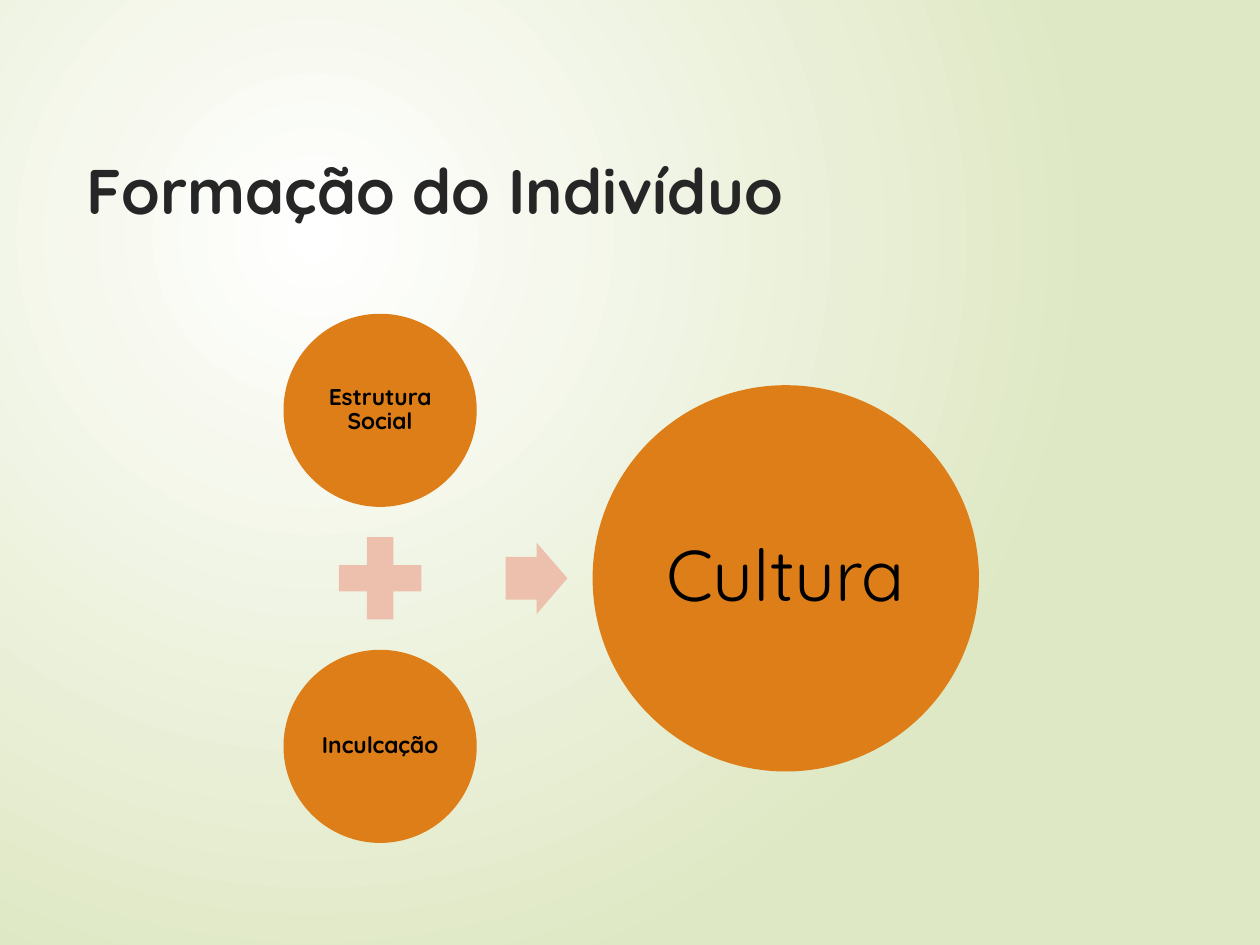
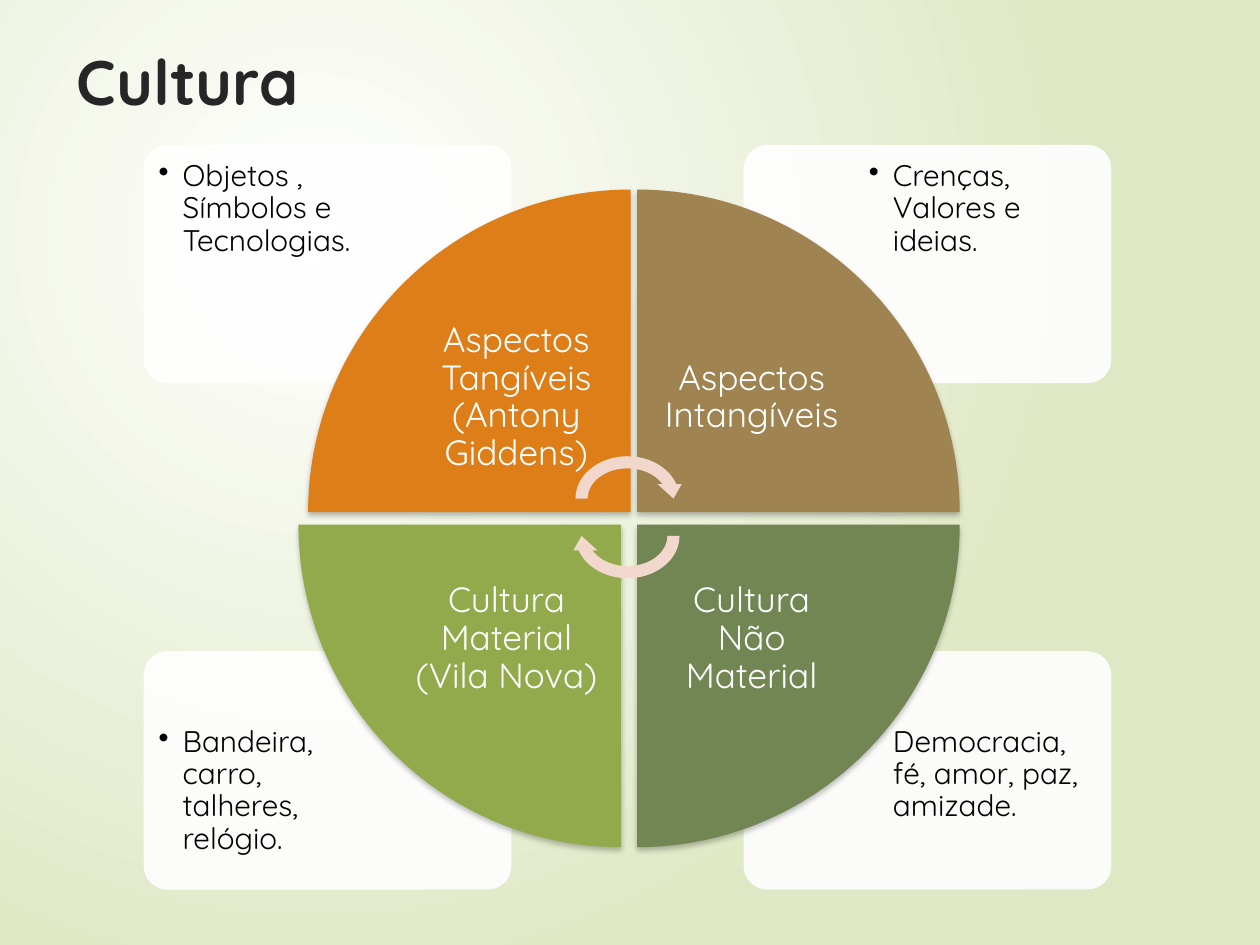
from dataclasses import dataclass

from lxml import etree
from pptx import Presentation
from pptx.dml.color import RGBColor
from pptx.enum.shapes import MSO_SHAPE as Preset
from pptx.enum.text import MSO_ANCHOR as Anchor, MSO_AUTO_SIZE as AutoSize, PP_ALIGN as Align
from pptx.oxml import parse_xml
from pptx.oxml.ns import nsdecls, qn
from pptx.util import Inches, Pt

FONT = "Quicksand"
ORANGE, BROWN, DARK_GREEN, GREEN = "DE7E18", "9F8351", "728653", "92AA4C"
PINK, PALE_PINK = "ECC0AC", "F2D8CC"
WHITE, BLACK, TITLE_GRAY, BACKGROUND_GREEN = "FFFFFF", "000000", "262626", "DFE8C4"
WEDGE_TEXT_SHARE = 0.71


@dataclass
class Box:
    """A rectangle in inches."""
    left: float
    top: float
    width: float
    height: float

    def share(self, x, y, width, height):
        """Return an inner box given as shares of this one."""
        return Box(self.left + x * self.width, self.top + y * self.height,
                   width * self.width, height * self.height)

    def emu(self):
        return [Inches(length) for length in (self.left, self.top, self.width, self.height)]


SLIDE = Box(0, 0, 10, 7.5)


@dataclass
class Aspect:
    """One quarter of the culture wheel with its card of examples."""
    column: int
    row: int
    wedge_left: float
    rotation: int
    color: str
    label: str
    examples: str


ASPECTS = [
    Aspect(0, 0, 0.17, 0, ORANGE, "Aspectos Tangíveis (Antony Giddens)",
           "Objetos , Símbolos e Tecnologias."),
    Aspect(1, 0, 0.51, 90, BROWN, "Aspectos Intangíveis", "Crenças, Valores e ideias."),
    Aspect(1, 1, 0.51, 180, DARK_GREEN, "Cultura Não Material",
           "Democracia, fé, amor, paz, amizade."),
    Aspect(0, 1, 0.16, 270, GREEN, "Cultura Material (Vila Nova)",
           "Bandeira, carro, talheres, relógio."),
]


def rgb(color):
    return RGBColor.from_string(color)


def write_text(shape, text, size, color=BLACK, bold=False, inset=0.0,
               anchor=Anchor.MIDDLE, align=Align.CENTER):
    frame = shape.text_frame
    frame.word_wrap = True
    frame.auto_size = AutoSize.NONE
    frame.vertical_anchor = anchor
    frame.margin_left = frame.margin_right = Inches(inset)
    frame.margin_top = frame.margin_bottom = Inches(inset)
    paragraph = frame.paragraphs[0]
    paragraph.text = text
    paragraph.alignment = align
    paragraph.line_spacing = 0.9
    font = paragraph.font
    font.name, font.size, font.bold = FONT, Pt(size), bold
    font.color.rgb = rgb(color)
    return paragraph


def add_preset(slide, preset, box, color, rotation=0):
    shape = slide.shapes.add_shape(preset, *box.emu())
    shape.shadow.inherit = False
    shape.fill.solid()
    shape.fill.fore_color.rgb = rgb(color)
    shape.line.fill.background()
    shape.rotation = rotation
    return shape


def add_circle(slide, box, text, size, bold, inset):
    circle = add_preset(slide, Preset.OVAL, box, ORANGE)
    write_text(circle, text, size, bold=bold, inset=inset)


def set_background(master):
    fill = master.background.fill
    fill.gradient()
    for stop, position, color in zip(fill.gradient_stops, (0, 1), (WHITE, BACKGROUND_GREEN)):
        stop.position = position
        stop.color.rgb = rgb(color)
    linear = next(master.element.iter(qn("a:lin")))
    linear.getparent().replace(linear, parse_xml(
        f'<a:path {nsdecls("a")} path="circle">'
        '<a:fillToRect l="50000" t="50000" r="100000" b="100000"/></a:path>'))


def add_titled_slide(presentation, text, box):
    slide = presentation.slides.add_slide(presentation.slide_layouts.get_by_name("Title Only"))
    title = slide.shapes.title
    title.left, title.top, title.width, title.height = box.emu()
    paragraph = write_text(title, text, 36, TITLE_GRAY, True, anchor=Anchor.TOP, align=Align.LEFT)
    paragraph.line_spacing = 1.0
    frame = title.text_frame
    frame.margin_left, frame.margin_top = Inches(0.1), Inches(0.05)
    return slide


def add_equation(slide, box):
    """Two stacked circles and a plus sign lead to a circle twice as large."""
    circle, plus, gap = 1.0, 0.58, 0.08
    arrow_left, arrow_width, arrow_height, result_left = 1.15, 0.32, 0.37, 1.6
    columns, rows = result_left + 2 * circle, 2 * (circle + gap) + plus

    def centered(left, middle, width, height):
        return box.share(left / columns, (middle - height / 2) / rows,
                         width / columns, height / rows)

    middle = rows / 2
    for text, center in (("Estrutura Social", circle / 2), ("Inculcação", rows - circle / 2)):
        add_circle(slide, centered(0, center, circle, circle), text, 13, True, 0.02)
    add_preset(slide, Preset.MATH_PLUS, centered((circle - plus) / 2, middle, plus, plus), PINK)
    arrow = add_preset(slide, Preset.RIGHT_ARROW,
                       centered(arrow_left, middle, arrow_width, arrow_height), PINK)
    arrow.adjustments[0] = 0.6
    add_circle(slide, centered(result_left, middle, 2 * circle, 2 * circle),
               "Cultura", 41, False, 0.06)


def add_card(slide, box, aspect):
    card = add_preset(slide, Preset.ROUNDED_RECTANGLE, box, WHITE)
    card.adjustments[0] = 0.1
    color = next(card.element.spPr.iter(qn("a:srgbClr")))
    etree.SubElement(color, qn("a:alpha"), val="90000")

    text_box = box.share(0.01 + 0.3 * aspect.column, 0.02 + 0.25 * aspect.row, 0.67, 0.7)
    paragraph = write_text(slide.shapes.add_textbox(*text_box.emu()), aspect.examples, 17,
                           inset=0.09, anchor=Anchor.TOP, align=Align.LEFT)
    properties = paragraph._p.get_or_add_pPr()
    properties.set("marL", str(Inches(0.19)))
    properties.set("indent", str(-Inches(0.19)))
    bullet = parse_xml(f'<a:buChar {nsdecls("a")} char="•"/>')
    properties.find(qn("a:defRPr")).addprevious(bullet)


def add_wedge(slide, box, aspect):
    wedge = add_preset(slide, Preset.PIE_WEDGE, box, aspect.color, aspect.rotation)
    effects = wedge.element.spPr.find(qn("a:effectLst"))
    effects.append(parse_xml(
        f'<a:outerShdw {nsdecls("a")} blurRad="{Pt(3)}" dist="{Pt(2)}" dir="5400000" '
        f'rotWithShape="0"><a:srgbClr val="{BLACK}"><a:alpha val="25000"/></a:srgbClr>'
        '</a:outerShdw>'))
    margin = 1 - WEDGE_TEXT_SHARE
    label_box = box.share(margin * (1 - aspect.column), margin * (1 - aspect.row),
                          WEDGE_TEXT_SHARE, WEDGE_TEXT_SHARE)
    write_text(slide.shapes.add_textbox(*label_box.emu()), aspect.label, 20, WHITE, inset=0.16)


def add_culture_wheel(slide, box):
    card_width, card_height = 0.38, 0.32
    for aspect in ASPECTS:
        card_box = box.share(aspect.column * (1 - card_width), aspect.row * (1 - card_height),
                             card_width, card_height)
        add_card(slide, card_box, aspect)
    radius = box.width / 3
    for aspect in ASPECTS:
        wedge_box = box.share(aspect.wedge_left, (0.06, 0.51)[aspect.row],
                              radius / box.width, radius / box.height)
        add_wedge(slide, wedge_box, aspect)
    for top, rotation in ((0.41, 0), (0.46, 180)):
        add_preset(slide, Preset.CIRCULAR_ARROW, box.share(0.44, top, 0.12, 0.13),
                   PALE_PINK, rotation)


def main():
    presentation = Presentation()
    presentation.slide_width, presentation.slide_height = Inches(SLIDE.width), Inches(SLIDE.height)
    set_background(presentation.slide_master)

    formation = add_titled_slide(presentation, "Formação do Indivíduo",
                                 Box(0.59, 1.15, 8.91, 0.95))
    add_equation(formation, Box(2.25, 2.49, 5.52, 4.2))

    culture = add_titled_slide(presentation, "Cultura", Box(0.51, 0.29, 8.95, 0.87))
    add_culture_wheel(culture, Box(1.14, 1.15, 7.68, 5.91))

    presentation.save("out.pptx")


if __name__ == "__main__":
    main()
